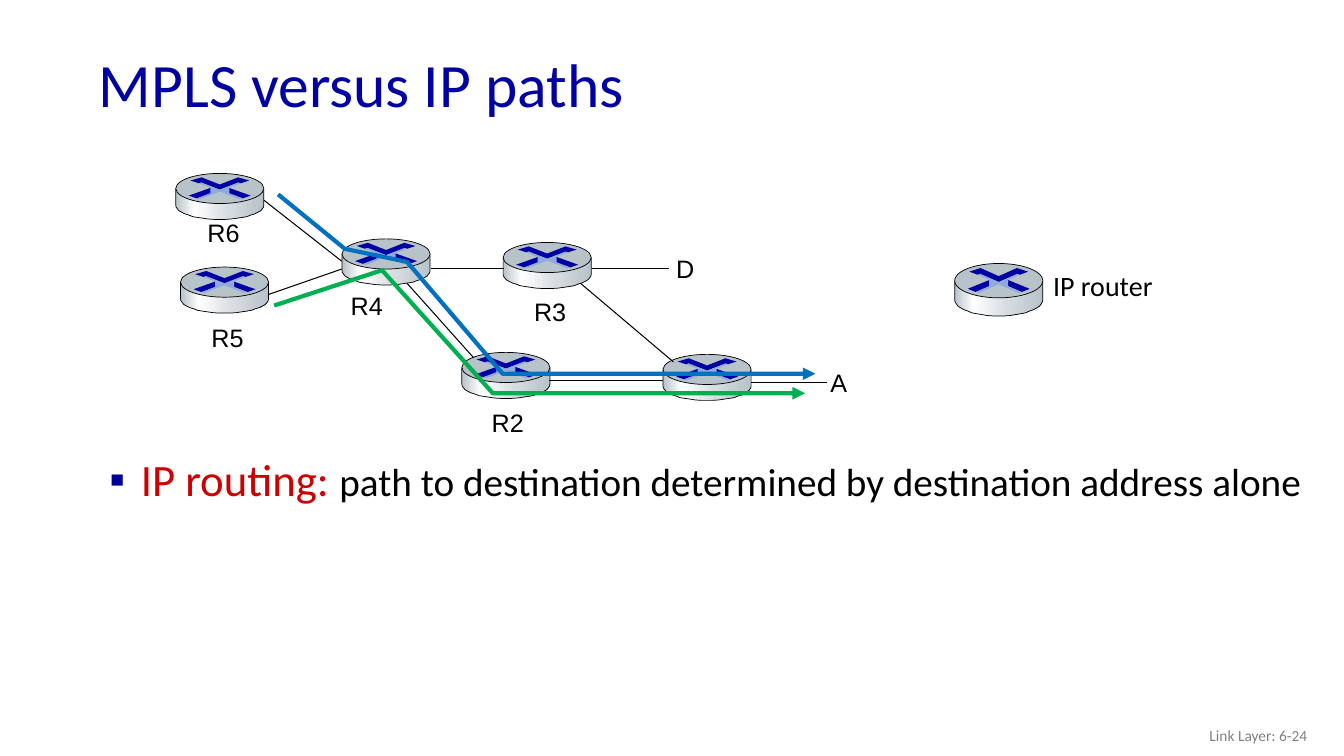
from math import cos, pi, sin

from lxml.etree import SubElement
from pptx import Presentation
from pptx.dml.color import RGBColor
from pptx.enum.shapes import MSO_CONNECTOR, MSO_SHAPE
from pptx.enum.text import MSO_ANCHOR, PP_ALIGN
from pptx.oxml.ns import qn
from pptx.util import Cm, Pt

NAVY = "0000A3"
STEEL = "B8C2C9"
BLACK = "000000"
ROUTER_WIDTH = 2.22
ROUTER_LID = 0.76
BODY_STOPS = [(0, STEEL), (21, "FFFFFF"), (60, "D6DCE0"), (100, STEEL)]

BODY_HALF = [(0, 0.39), (1.11, 0.39)] + [
    (round(1.11 * cos(step * pi / 24), 2), round(0.8 + 0.36 * sin(step * pi / 24), 2))
    for step in range(13)
]
CHEVRON_HALF = [(0, 0.28), (0.46, 0.1), (0.74, 0.18), (0.53, 0.25), (0.47, 0.23), (0, 0.41)]
GLOW_HALF = [(0, 0.41), (0.46, 0.23), (0.53, 0.25), (0.24, 0.36), (0.24, 0.5),
             (0.58, 0.63), (0.5, 0.65), (0, 0.46)]
ARM = [(0.22, 0.36), (0.78, 0.56), (0.58, 0.63), (0.22, 0.5)]

BACK_ROUTERS = [(8.62, 6.02), (12.68, 6.11), (11.64, 8.88), (16.71, 8.93)]
FRONT_ROUTERS = [(4.43, 4.37), (4.55, 6.73)]
LINKS = [
    (6.53, 4.95, 8.61, 6.58),
    (6.71, 7.44, 8.61, 6.78),
    (10.85, 6.76, 12.7, 6.76),
    (10.26, 7.14, 11.94, 9.02),
    (13.84, 9.6, 16.71, 9.6),
    (14.63, 7.14, 16.97, 9.12),
    (18.92, 9.65, 20.85, 9.65),
    (14.91, 6.76, 16.87, 6.76),
]
LABELS = [
    ("R2", 12.14, 10.13, 1.32),
    ("D", 16.79, 6.27, 0.97),
    ("R3", 13.21, 7.34, 1.32),
    ("R5", 5.08, 8, 1.32),
    ("A", 20.68, 9.14, 0.94),
    ("R6", 4.98, 5.36, 1.32),
    ("R4", 8.59, 7.19, 1.32),
]
PATHS = [
    ("0070C0", [(7.01, 4.9), (8.69, 6.27), (10.26, 6.6), (12.67, 9.42), (20.55, 9.42)]),
    ("00B050", [(6.91, 7.7), (9.63, 6.81), (12.42, 9.91), (20.29, 9.91)]),
]


def color(value):
    """Turn a hex string into a colour."""
    return RGBColor.from_string(value)


def set_values(target, values):
    """Set each named attribute of the target."""
    for name, value in values.items():
        setattr(target, name, value)


def set_line(line, value, width):
    """Give a line its colour and its width in points."""
    line.color.rgb = color(value)
    line.width = Pt(width)


def mirrored(half):
    """Complete the right half of an outline with its left half."""
    return half + [(-x, y) for x, y in reversed(half)]


def add_outline(shapes, points, closed=True):
    """Add a freeform through points given in centimetres."""
    corners = [(Cm(x), Cm(y)) for x, y in points]
    builder = shapes.build_freeform(*corners[0])
    builder.add_line_segments(corners[1:], close=closed)
    shape = builder.convert_to_shape()
    shape.shadow.inherit = False
    return shape


def fill_gradient(shape, stops):
    """Fill a shape from left to right with the given colour stops."""
    shape.fill.gradient()
    shape.fill.gradient_angle = 0
    stop_list = shape._element.spPr.find(qn("a:gradFill")).find(qn("a:gsLst"))
    for old_stop in list(stop_list):
        stop_list.remove(old_stop)
    for percent, value in stops:
        stop = SubElement(stop_list, qn("a:gs"), pos=str(percent * 1000))
        SubElement(stop, qn("a:srgbClr"), val=value)


def add_router(slide, left, top, stretch=1):
    """Draw a router as a group of body, lid and crossed arrows."""
    shapes = slide.shapes.add_group_shape().shapes

    def place(points):
        """Move points from the router's axis to the slide."""
        return [(left + ROUTER_WIDTH / 2 + x, top + stretch * y) for x, y in points]

    body = add_outline(shapes, place(mirrored(BODY_HALF)))
    fill_gradient(body, BODY_STOPS)
    lid = shapes.add_shape(MSO_SHAPE.OVAL, Cm(left), Cm(top),
                           Cm(ROUTER_WIDTH), Cm(ROUTER_LID * stretch))
    lid.shadow.inherit = False
    lid.fill.solid()
    lid.fill.fore_color.rgb = color(STEEL)
    for shape in (body, lid):
        set_line(shape.line, BLACK, 0.5)
    parts = [
        (mirrored(CHEVRON_HALF), NAVY),
        (ARM, NAVY),
        ([(-x, y) for x, y in ARM], "0000A8"),
        (mirrored(GLOW_HALF), "8FAADC"),
    ]
    for points, value in parts:
        shape = add_outline(shapes, place(points))
        shape.fill.solid()
        shape.fill.fore_color.rgb = color(value)
        shape.line.fill.background()


def add_link(slide, x1, y1, x2, y2):
    """Draw a thin straight link between two points."""
    link = slide.shapes.add_connector(MSO_CONNECTOR.STRAIGHT, Cm(x1), Cm(y1), Cm(x2), Cm(y2))
    set_line(link.line, BLACK, 0.75)
    SubElement(link._element.spPr, qn("a:effectLst"))


def add_route(slide, value, points):
    """Draw a thick bent route that ends in an arrowhead."""
    route = add_outline(slide.shapes, points, closed=False)
    route.fill.background()
    set_line(route.line, value, 3)
    SubElement(route.line._get_or_add_ln(), qn("a:tailEnd"), type="triangle")


def add_text(slide, box, runs, frame_format=None, paragraph_format=None):
    """Add a text box with one paragraph of (text, font, size, colour) runs."""
    frame = slide.shapes.add_textbox(*map(Cm, box)).text_frame
    set_values(frame, {"word_wrap": True, **(frame_format or {})})
    paragraph = frame.paragraphs[0]
    set_values(paragraph, paragraph_format or {})
    for text, name, size, value in runs:
        run = paragraph.add_run()
        run.text = text
        set_values(run.font, {"name": name, "size": Pt(size)})
        run.font.color.rgb = color(value)
    return paragraph


def add_bullet(paragraph, character, value, indent):
    """Give a paragraph a coloured bullet and a hanging indent."""
    properties = paragraph._p.get_or_add_pPr()
    properties.set("marL", str(Cm(indent)))
    properties.set("indent", str(-Cm(indent)))
    SubElement(SubElement(properties, qn("a:buClr")), qn("a:srgbClr"), val=value)
    SubElement(properties, qn("a:buFont"), typeface="Arial")
    SubElement(properties, qn("a:buChar"), char=character)


def main():
    """Build the slide and save it."""
    presentation = Presentation()
    set_values(presentation, {"slide_width": Cm(33.87), "slide_height": Cm(19.05)})
    slide = presentation.slides.add_slide(presentation.slide_layouts[6])
    middle = {"vertical_anchor": MSO_ANCHOR.MIDDLE}
    no_wrap = {"word_wrap": False}

    for position in BACK_ROUTERS:
        add_router(slide, *position)
    add_text(slide, (2.24, 0.97, 29.21, 2.49),
             [("MPLS versus IP paths", "Calibri", 44, NAVY)], middle, {"line_spacing": 0.9})
    add_text(slide, (25.58, 18.03, 7.62, 1.02),
             [("Link Layer: 6-24", "Calibri", 11, "808080")], middle,
             {"alignment": PP_ALIGN.RIGHT})
    for ends in LINKS:
        add_link(slide, *ends)
    for text, left, top, width in LABELS:
        add_text(slide, (left, top, width, 1.02), [(text, "Arial", 18, BLACK)], no_wrap)
    for position in FRONT_ROUTERS:
        add_router(slide, *position)
    for value, points in PATHS:
        add_route(slide, value, points)
    statement = add_text(
        slide, (2.51, 11.46, 30.91, 1.57),
        [("IP routing: ", "Calibri", 32, "CC0000"),
         ("path to destination determined by destination address alone", "Calibri", 28, BLACK)],
        paragraph_format={"line_spacing": 0.85})
    add_bullet(statement, "▪", "000099", 0.79)
    add_text(slide, (26.29, 6.63, 3.05, 1.12), [("IP router", "Calibri", 20, BLACK)], no_wrap)
    add_router(slide, 24.06, 6.64, stretch=1.14)
    presentation.save("out.pptx")


if __name__ == "__main__":
    main()
